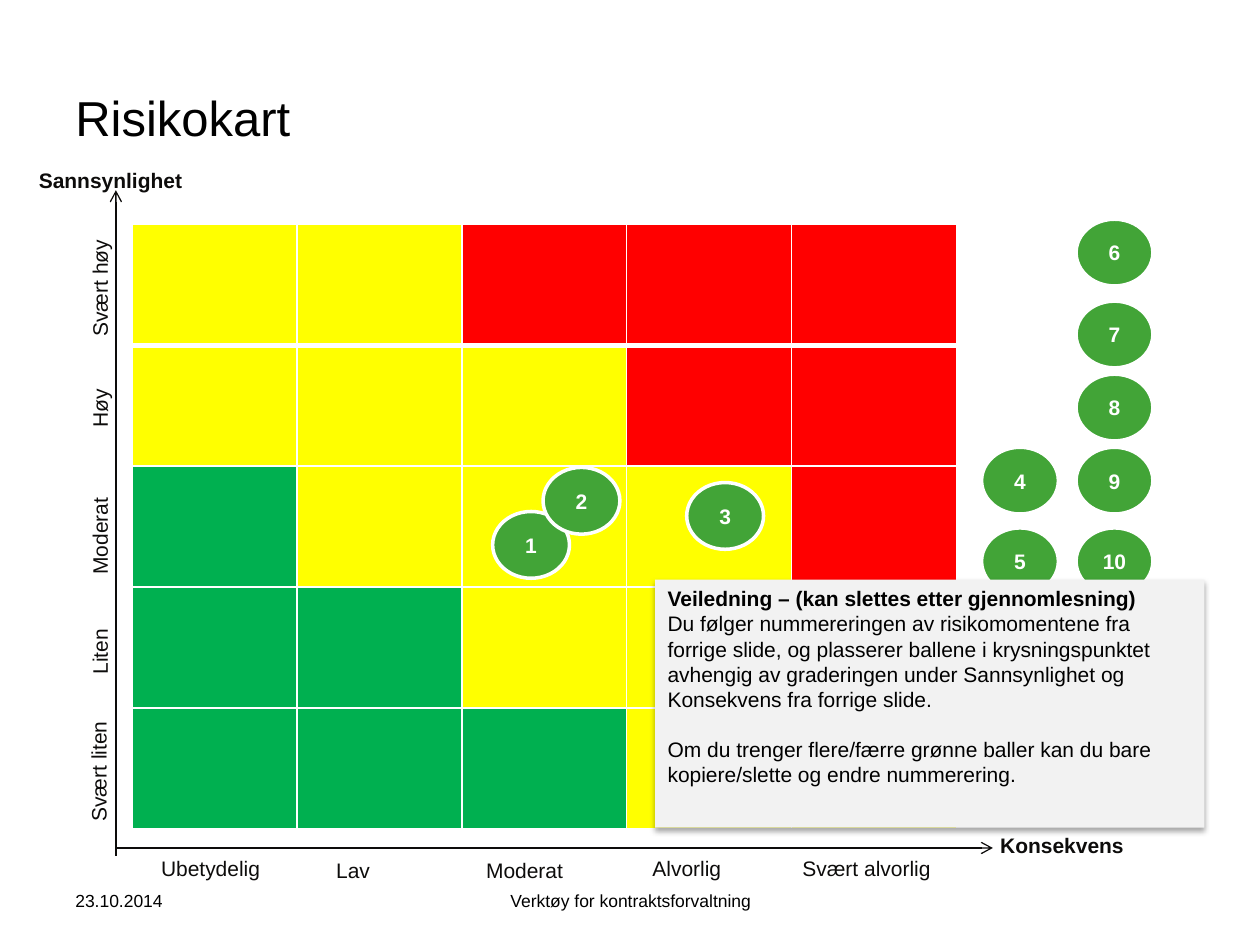
from lxml import etree
from pptx import Presentation
from pptx.dml.color import RGBColor
from pptx.enum.shapes import MSO_CONNECTOR, MSO_SHAPE
from pptx.enum.text import MSO_ANCHOR, PP_ALIGN
from pptx.oxml.ns import qn
from pptx.util import Inches, Pt

STRAIGHT = MSO_CONNECTOR.STRAIGHT
OVAL, RECT = MSO_SHAPE.OVAL, MSO_SHAPE.RECTANGLE
TOP, MIDDLE = MSO_ANCHOR.TOP, MSO_ANCHOR.MIDDLE
LEFT, CENTER = PP_ALIGN.LEFT, PP_ALIGN.CENTER

COLORS = {"black": "000000", "ink": "0D0C0B", "white": "FFFFFF",
          "ball": "42A437", "note": "F2F2F2",
          "Y": "FFFF00", "R": "FF0000", "G": "00B050"}
FONT = "Arial"

# One letter per cell, highest probability first
RISK_LEVELS = ["YYRRR", "YYYRR", "GYYYR", "GGYYY", "GGGYY"]
# Left and top relative to the matrix
PROBABILITIES = [("Svært høy", -0.86, 0.24), ("Høy", -0.86, 0.96),
                 ("Moderat", -0.86, 2.13), ("Liten", -0.86, 2.92),
                 ("Svært liten", -0.87, 4.09)]
CONSEQUENCES = [("Ubetydelig", 0.13, 4.96), ("Lav", 1.52, 4.98),
                ("Moderat", 2.71, 4.98), ("Alvorlig", 4.03, 4.96),
                ("Svært alvorlig", 5.22, 4.96)]
PLACED_BALLS = [(1, 2.86, 2.28), (2, 3.26, 1.93), (3, 4.4, 2.05)]
# Left and top relative to the stock of unplaced balls
SPARE_BALLS = [(4, 0, 1.81), (5, 0, 2.45), (6, 0.75, 0), (7, 0.75, 0.65),
               (8, 0.75, 1.23), (9, 0.75, 1.81), (10, 0.75, 2.45)]


def color(name):
    return RGBColor.from_string(COLORS[name])


def write(p, text, size=12, bold=False, ink="ink", align=LEFT):
    p.alignment = align
    r = p.add_run()
    r.text = text
    r.font.name, r.font.size, r.font.bold = FONT, Pt(size), bold
    r.font.color.rgb = color(ink)


def add_text(s, text, x, y, w, h=0.3, anchor=TOP, rotation=0, **fmt):
    sp = s.shapes.add_textbox(Inches(x), Inches(y), Inches(w), Inches(h))
    sp.rotation = rotation
    tf = sp.text_frame
    tf.word_wrap = True
    tf.vertical_anchor = anchor
    write(tf.paragraphs[0], text, **fmt)


def add_border(tc_pr, side, width):
    ln = etree.SubElement(tc_pr, qn(f"a:ln{side}"), w=str(Pt(width)))
    fill = etree.SubElement(ln, qn("a:solidFill"))
    etree.SubElement(fill, qn("a:srgbClr"), val=COLORS["white"])


def add_arrow(s, x1, y1, x2, y2):
    line = s.shapes.add_connector(
        STRAIGHT, Inches(x1), Inches(y1), Inches(x2), Inches(y2))
    line.line.color.rgb = color("ink")
    line.line.width = Pt(0.75)
    etree.SubElement(line.line._get_or_add_ln(), qn("a:tailEnd"), type="arrow")
    etree.SubElement(line._element.spPr, qn("a:effectLst"))


def add_balls(s, x, y, balls):
    for number, dx, dy in balls:
        sp = s.shapes.add_shape(OVAL, Inches(x + dx), Inches(y + dy),
                                Inches(0.61), Inches(0.53))
        sp.shadow.inherit = False
        sp.fill.solid()
        sp.fill.fore_color.rgb = color("ball")
        sp.line.color.rgb = color("white")
        sp.line.width = Pt(2)
        tf = sp.text_frame
        tf.vertical_anchor = MIDDLE
        write(tf.paragraphs[0], str(number), bold=True, ink="white", align=CENTER)


def add_matrix(s, x, y, w, h):
    rows, cols = len(RISK_LEVELS), len(RISK_LEVELS[0])
    table = s.shapes.add_table(rows, cols, Inches(x), Inches(y),
                               Inches(w), Inches(h)).table
    table.first_row = table.horz_banding = False
    for i, levels in enumerate(RISK_LEVELS):
        table.rows[i].height = Inches(h / rows)
        for j, level in enumerate(levels):
            cell = table.cell(i, j)
            # A heavier rule separates the top row
            widths = {"L": 1, "R": 1, "T": 3 if i == 1 else 1,
                      "B": 3 if i == 0 else 1}
            for side, width in widths.items():
                add_border(cell._tc.get_or_add_tcPr(), side, width)
            cell.fill.solid()
            cell.fill.fore_color.rgb = color(level)


def add_axes(s, x, y, w, h):
    add_text(s, "Konsekvens", x + w + 0.25, y + h - 0.02, 1.34, bold=True)
    add_text(s, "Sannsynlighet", x - 0.84, y - 0.5, 1.57, bold=True)
    add_arrow(s, x - 0.13, y + h + 0.15, x + w + 0.29, y + h + 0.15)
    add_arrow(s, x - 0.13, y + h + 0.21, x - 0.13, y - 0.27)
    for label, dx, dy in PROBABILITIES:
        add_text(s, label, x + dx, y + dy, 1.2, rotation=270)
    for label, dx, dy in CONSEQUENCES:
        add_text(s, label, x + dx, y + dy, 1.34)


def add_guidance(s, x, y, w, h):
    sp = s.shapes.add_shape(RECT, Inches(x), Inches(y), Inches(w), Inches(h))
    sp.fill.solid()
    sp.fill.fore_color.rgb = color("note")
    sp.line.fill.background()
    # Soft shadow straight below
    effects = etree.SubElement(sp._element.spPr, qn("a:effectLst"))
    shadow = etree.SubElement(effects, qn("a:outerShdw"), blurRad=str(Pt(3.1)),
                              dist=str(Pt(1.8)), dir="5400000", rotWithShape="0")
    shade = etree.SubElement(shadow, qn("a:srgbClr"), val=COLORS["black"])
    etree.SubElement(shade, qn("a:alpha"), val="35000")

    tf = sp.text_frame
    tf.word_wrap = True
    tf.vertical_anchor = TOP
    write(tf.paragraphs[0], "Veiledning – (kan slettes etter gjennomlesning)",
          bold=True, ink="black")
    write(tf.add_paragraph(),
          "Du følger nummereringen av risikomomentene fra forrige slide, og "
          "plasserer ballene i krysningspunktet avhengig av graderingen under "
          "Sannsynlighet og Konsekvens fra forrige slide.", ink="black")
    p = tf.add_paragraph()
    p.space_before = Pt(14)
    write(p, "Om du trenger flere/færre grønne baller kan du bare "
          "kopiere/slette og endre nummerering.", ink="black")


def add_footer(s, x, y, h):
    add_text(s, "23.10.2014", x, y, 2.33, h, MIDDLE, size=10, ink="black")
    add_text(s, "Verktøy for kontraktsforvaltning", x + 2.92, y, 3.17, h, MIDDLE,
             size=10, ink="black", align=CENTER)


def main():
    prs = Presentation()
    prs.slide_width, prs.slide_height = Inches(10), Inches(7.5)
    s = prs.slides.add_slide(prs.slide_layouts[6])

    add_text(s, "Risikokart", 0.5, 0.3, 9, 1.25, MIDDLE, size=28, ink="black")
    matrix = (1.05, 1.78, 6.54, 4.8)
    add_matrix(s, *matrix)
    add_axes(s, *matrix)
    add_balls(s, *matrix[:2], PLACED_BALLS)
    add_balls(s, 7.79, 1.74, SPARE_BALLS)
    add_guidance(s, 5.2, 4.6, 4.36, 1.97)
    add_footer(s, 0.5, 6.95, 0.4)

    prs.save("out.pptx")


if __name__ == "__main__":
    main()
